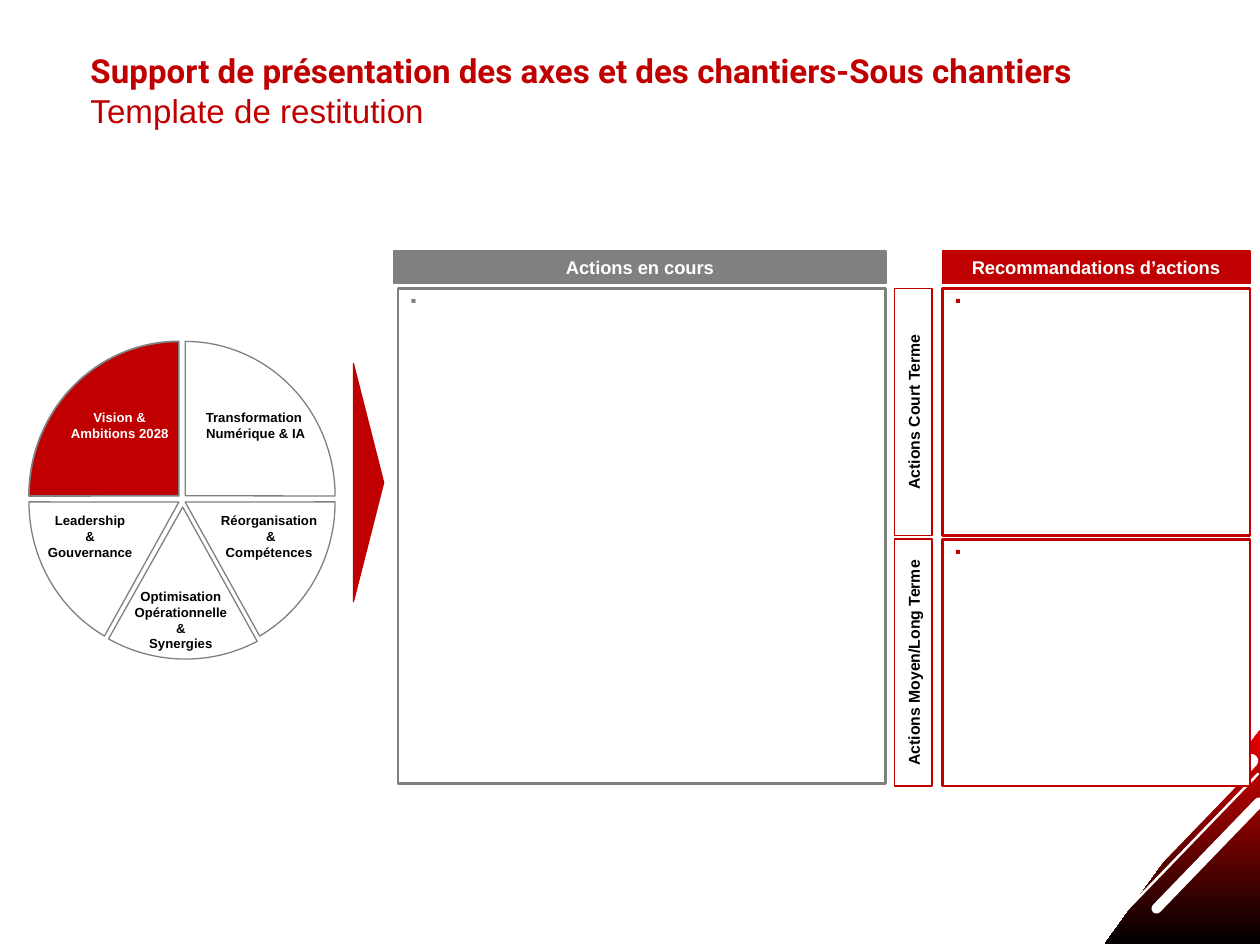
from lxml.etree import SubElement as Sub
from pptx import Presentation as Deck
from pptx.dml.color import RGBColor as Rgb
from pptx.enum.shapes import MSO_SHAPE as Kind
from pptx.enum.text import MSO_ANCHOR as Anchor, PP_ALIGN as Align
from pptx.oxml.ns import qn
from pptx.util import Inches, Pt

COL = ROW = Inches(0.1)
HUES = {"red": "C00000", "grey": "808080", "white": "FFFFFF",
        "black": "000000", "flame": "EA0000"}


def hue(name):
    return Rgb.from_string(HUES[name])


def grid(x, y, w, h):
    return [round(n) for n in (x * COL, y * ROW, w * COL, h * ROW)]


def draw(pen, kind, cell, fill=None, line=None, width=1, turn=0, flip="", adj=()):
    form = pen.add_shape(kind, *grid(*cell))
    form.shadow.inherit = False
    form.rotation = turn
    for i, part in enumerate(adj):
        form.adjustments[i] = part
    for axis in flip:
        form._element.spPr.xfrm.set("flip" + axis, "1")
    if fill:
        form.fill.solid()
        form.fill.fore_color.rgb = hue(fill)
    else:
        form.fill.background()
    if line:
        form.line.color.rgb = hue(line)
        form.line.width = Pt(width)
    else:
        form.line.fill.background()
    return form


def style(run, size, tint, bold=True, face="Arial"):
    font = run.font
    font.name, font.size, font.bold = face, Pt(size), bold
    font.color.rgb = hue(tint)


def write(form, text, size, tint, anchor=Anchor.MIDDLE):
    frame = form.text_frame
    frame.text = text
    frame.word_wrap = True
    frame.vertical_anchor = anchor
    for para in frame.paragraphs:
        para.alignment = Align.CENTER
        for run in para.runs:
            style(run, size, tint)


def label(pen, cell, text, tint):
    write(pen.add_textbox(*grid(*cell)), text, 7.5, tint, Anchor.TOP)


def bar(pen, cell, text, size, fill, line, tint, turn=0):
    form = draw(pen, Kind.ROUNDED_RECTANGLE, cell, fill, line, turn=turn, adj=[0])
    write(form, text, size, tint)


def panel(pen, cell, tint):
    form = draw(pen, Kind.ROUNDED_RECTANGLE, cell, "white", tint, 1.5, adj=[0])
    frame = form.text_frame
    frame.word_wrap = True
    frame.vertical_anchor = Anchor.TOP
    para = frame.paragraphs[0]
    para.alignment = Align.LEFT
    props = para._p.get_or_add_pPr()
    props.set("marL", str(Inches(0.1)))
    props.set("indent", str(-Inches(0.1)))
    Sub(Sub(props, qn("a:buClr")), qn("a:srgbClr")).set("val", HUES[tint])
    Sub(props, qn("a:buFont")).set("typeface", "Wingdings")
    Sub(props, qn("a:buChar")).set("char", "§")
    run = para.add_run()
    run.text = " "
    style(run, 8, tint, False)


def corner(pen):
    wedge = draw(pen, Kind.RIGHT_TRIANGLE, (87.7, 57.9, 12.3, 17), "red", flip="H")
    wedge.fill.gradient()
    wedge.fill.gradient_angle = 270
    for stop, name, spot in zip(wedge.fill.gradient_stops, ("flame", "black"), (0, 1)):
        stop.color.rgb = hue(name)
        stop.position = spot
    for cell in ((84.7, 65.8, 17.7, 1.1), (89.6, 67.5, 12.5, 0.8), (87.1, 66.7, 15.1, 0.2)):
        draw(pen, Kind.ROUNDED_RECTANGLE, cell, "white", turn=314, adj=[0.5])


def wheel(pen):
    start, top, side, base = 107.954, 162, 144.557, 142.993
    for cell, end, flip, turn, fill, width in (
        ((2.3, 27.1, 23.8, 24.5), top, "", 0, "red", 1),
        ((2.8, 27.1, 23.8, 24.5), top, "H", 0, None, 0.75),
        ((2.3, 27.6, 23.8, 24.5), side, "V", 0, None, 0.75),
        ((2.5, 28, 24, 24.5), base, "V", 299.3, None, 0.75),
        ((2.8, 27.6, 23.8, 24.5), side, "HV", 0, None, 0.75),
    ):
        draw(pen, Kind.PIE, cell, fill, "grey", width, turn, flip, (start, end))
    for cell, text, tint in (
        ((4.5, 32, 10, 3.5), "Vision & Ambitions 2028", "white"),
        ((14.5, 32, 11.6, 3.5), "Transformation \nNumérique & IA", "black"),
        ((2.3, 40.2, 10, 4.8), "Leadership \n& \nGouvernance ", "black"),
        ((9.5, 46.2, 10, 6.1), "Optimisation \nOpérationnelle \n& \nSynergies ", "black"),
        ((15.6, 40.2, 11.8, 4.8), "Réorganisation \n&\nCompétences ", "black"),
    ):
        label(pen, cell, text, tint)


def title(pen):
    frame = pen.add_textbox(*grid(6.2, 5.1, 96, 5.7)).text_frame
    frame.word_wrap = True
    frame.vertical_anchor = Anchor.BOTTOM
    para = frame.paragraphs[0]
    para.text = ("Support de présentation des axes et des chantiers-Sous chantiers"
                 "\vTemplate de restitution")
    head, tail = para.runs
    style(head, 18.9, "red", True, "Roboto")
    style(tail, 18.9, "red", False)


def main():
    deck = Deck()
    deck.slide_width, deck.slide_height = 100 * COL, 75 * ROW
    pen = deck.slides.add_slide(deck.slide_layouts[6]).shapes
    corner(pen.add_group_shape().shapes)
    wheel(pen.add_group_shape().shapes)
    draw(pen, Kind.ISOSCELES_TRIANGLE, (19.8, 37.1, 18.9, 2.4), "red", "red", 0.75, 90)
    panel(pen, (31.6, 22.9, 38.7, 39.3), "grey")
    bar(pen, (31.3, 19.9, 39, 2.6), "Actions en cours", 10.5, "grey", "grey", "white")
    bar(pen, (74.8, 19.9, 24.4, 2.6), "Recommandations d’actions", 10.5,
        "red", "red", "white")
    for i, text in enumerate(("Actions Court Terme", "Actions Moyen/Long Terme")):
        drop = 19.9 * i
        panel(pen, (74.8, 22.9 + drop, 24.4, 19.6), "red")
        bar(pen, (62.7, 31.2 + drop, 19.6, 3), text, 9, "white", "red", "black", 270)
    title(pen)
    deck.save("out.pptx")


if __name__ == "__main__":
    main()
